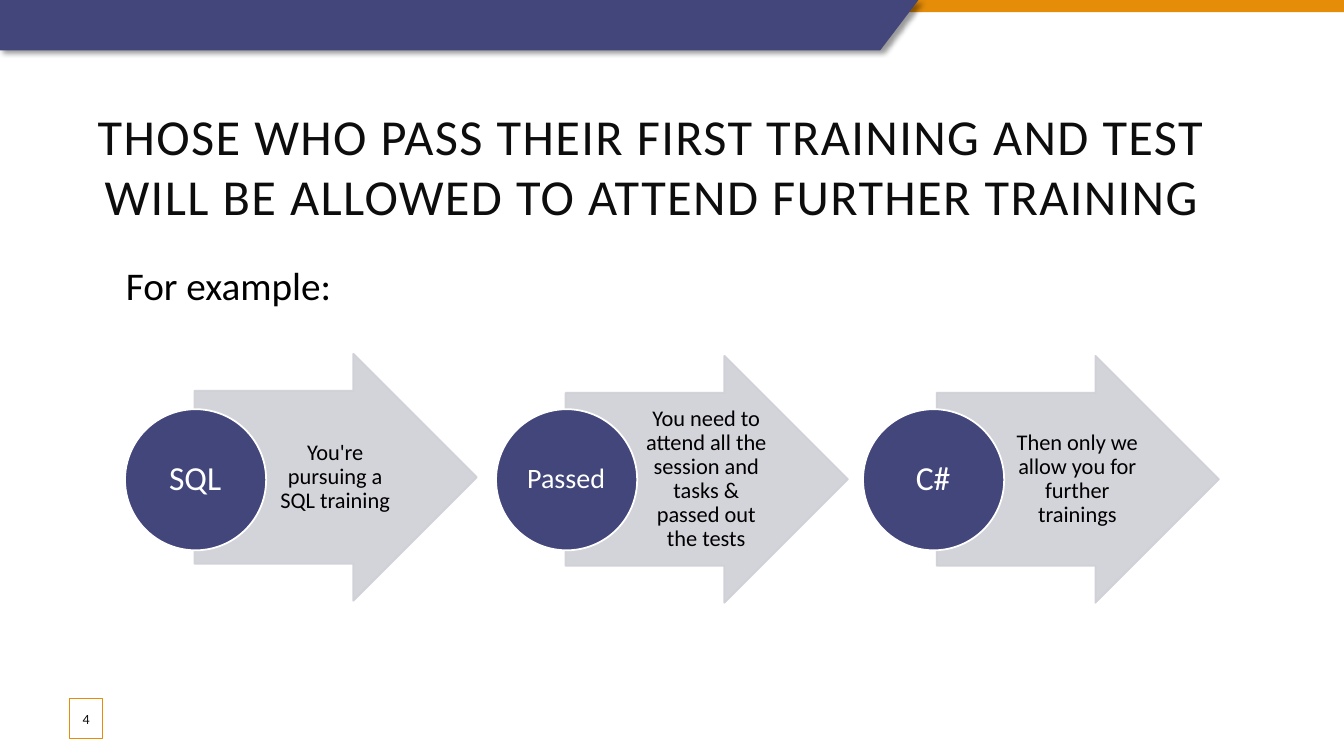
"""Build the training path slide: banner, title and three arrow steps."""
import pptx
import pptx.dml.color
import pptx.enum.shapes
import pptx.enum.text
import pptx.oxml
import pptx.oxml.ns
import pptx.util

WIDE, HIGH = 13.33, 7.5
FONT = "Calibri"
NAVY, GOLD, PALE, INK = "43467B", "E58C09", "CFCFD7", "0D0D0D"
LEFT, PITCH, MID = 1.24, 3.68, 4.76
STEPS = [
    ("SQL", 24, "You're pursuing a SQL training", 0, -0.02),
    ("Passed", 20, "You need to attend all the session and tasks & "
     "passed out the tests", 0, 0),
    ("C#", 24, "Then only we allow you for further trainings", -0.04, 0),
]
KIND = pptx.enum.shapes.MSO_SHAPE
ALIGN = pptx.enum.text.PP_ALIGN
ANCHOR = pptx.enum.text.MSO_ANCHOR


def inch(*sizes):
    """Turn inches into lengths."""
    return [pptx.util.Inches(size) for size in sizes]


def color(code):
    """Turn a hex string into a colour."""
    return pptx.dml.color.RGBColor.from_string(code)


def fade(fill, share):
    """Set the opacity of a solid fill, in percent."""
    tone = fill._xPr.find(".//" + pptx.oxml.ns.qn("a:srgbClr"))
    tone.append(pptx.oxml.parse_xml(
        f'<a:alpha {pptx.oxml.ns.nsdecls("a")} val="{share * 1000}"/>'))


def paint(shape, fill, line=None, width=1.25, clear=100, edge=100):
    """Give a shape its fill and line, without a shadow."""
    shape.shadow.inherit = False
    shape.fill.solid()
    shape.fill.fore_color.rgb = color(fill)
    if clear < 100:
        fade(shape.fill, clear)
    if line is None:
        shape.line.fill.background()
        return
    shape.line.width = pptx.util.Pt(width)
    shape.line.color.rgb = color(line)
    if edge < 100:
        fade(shape.line.fill, edge)


def write(shape, text, size, tone, align=ALIGN.CENTER, pads=None,
          anchor=ANCHOR.MIDDLE, wrap=True, space=None):
    """Put one formatted paragraph into a shape."""
    frame = shape.text_frame
    frame.text = text
    frame.word_wrap = wrap
    frame.vertical_anchor = anchor
    if pads:
        (frame.margin_left, frame.margin_top,
         frame.margin_right, frame.margin_bottom) = inch(*pads)
    para = frame.paragraphs[0]
    para.alignment = align
    para.line_spacing = space
    font = para.runs[0].font
    font.name = FONT
    font.size = pptx.util.Pt(size)
    font.color.rgb = color(tone)
    return para.runs[0]


def label(slide, box, text, size, tone, **style):
    """Add a text box."""
    return write(slide.shapes.add_textbox(*inch(*box)), text, size, tone,
                 **style)


def banner(slide):
    """Add the gold strip and the slanted navy band."""
    strip = slide.shapes.add_shape(KIND.RECTANGLE, *inch(0, 0, WIDE, 0.12))
    paint(strip, GOLD)
    path = slide.shapes.build_freeform(0, 0)
    path.add_line_segments(
        [inch(*spot) for spot in ((9.11, 0), (8.73, 0.5), (0, 0.5))],
        close=True)
    band = path.convert_to_shape()
    paint(band, NAVY)
    glow = band._element.spPr.find(pptx.oxml.ns.qn("a:effectLst"))
    glow.append(pptx.oxml.parse_xml(
        f'<a:outerShdw {pptx.oxml.ns.nsdecls("a")} blurRad="50800" '
        'dist="38100" dir="2700000" algn="tl" rotWithShape="0">'
        '<a:srgbClr val="000000"><a:alpha val="40000"/></a:srgbClr>'
        '</a:outerShdw>'))


def step(slide, left, mid, name, size, note, shift):
    """Add one arrow with its note and its named circle."""
    arrow = slide.shapes.add_shape(
        KIND.RIGHT_ARROW, *inch(left + 0.69, mid - 1.23, 2.8, 2.45))
    arrow.adjustments[0], arrow.adjustments[1] = 0.7, 0.5
    paint(arrow, PALE, PALE, clear=90, edge=90)
    label(slide, (left + 1.39, mid - 0.86, 1.37, 1.71), note, 16, "000000",
          pads=(0.04, 0.01, 0.02, 0.01), space=0.9)
    left += shift
    disc = slide.shapes.add_shape(
        KIND.OVAL, *inch(left, MID - 0.7, 1.4, 1.4))
    paint(disc, NAVY, "FFFFFF")
    label(slide, (left + 0.2, MID - 0.5, 0.99, 0.99), name, size, "FFFFFF",
          pads=[0.01] * 4, space=0.9)


def main():
    """Build and save the slide."""
    deck = pptx.Presentation()
    deck.slide_width, deck.slide_height = inch(WIDE, HIGH)
    slide = deck.slides.add_slide(deck.slide_layouts[6])
    banner(slide)
    title = label(slide, (0.44, 0.99, 12.05, 1.17),
                  "THOSE WHO PASS THEIR FIRST TRAINING AND TEST "
                  "WILL BE ALLOWED TO ATTEND FURTHER TRAINING",
                  36, INK, anchor=ANCHOR.TOP)
    title.font._element.set("spc", "100")
    page = slide.shapes.add_shape(
        KIND.RECTANGLE, *inch(0.69, 6.93, 0.33, 0.4))
    paint(page, "FFFFFF", GOLD, 0.75, clear=82)
    write(page, "4", 10, INK, pads=(0, 0.05, 0, 0.05))
    label(slide, (1.15, 2.54, 2.25, 0.57), "For example:", 28, "000000",
          align=ALIGN.LEFT, anchor=ANCHOR.TOP, wrap=False)
    for col, (name, size, note, shift, lift) in enumerate(STEPS):
        step(slide, LEFT + col * PITCH, MID + lift, name, size, note, shift)
    deck.save("out.pptx")


if __name__ == "__main__":
    main()
